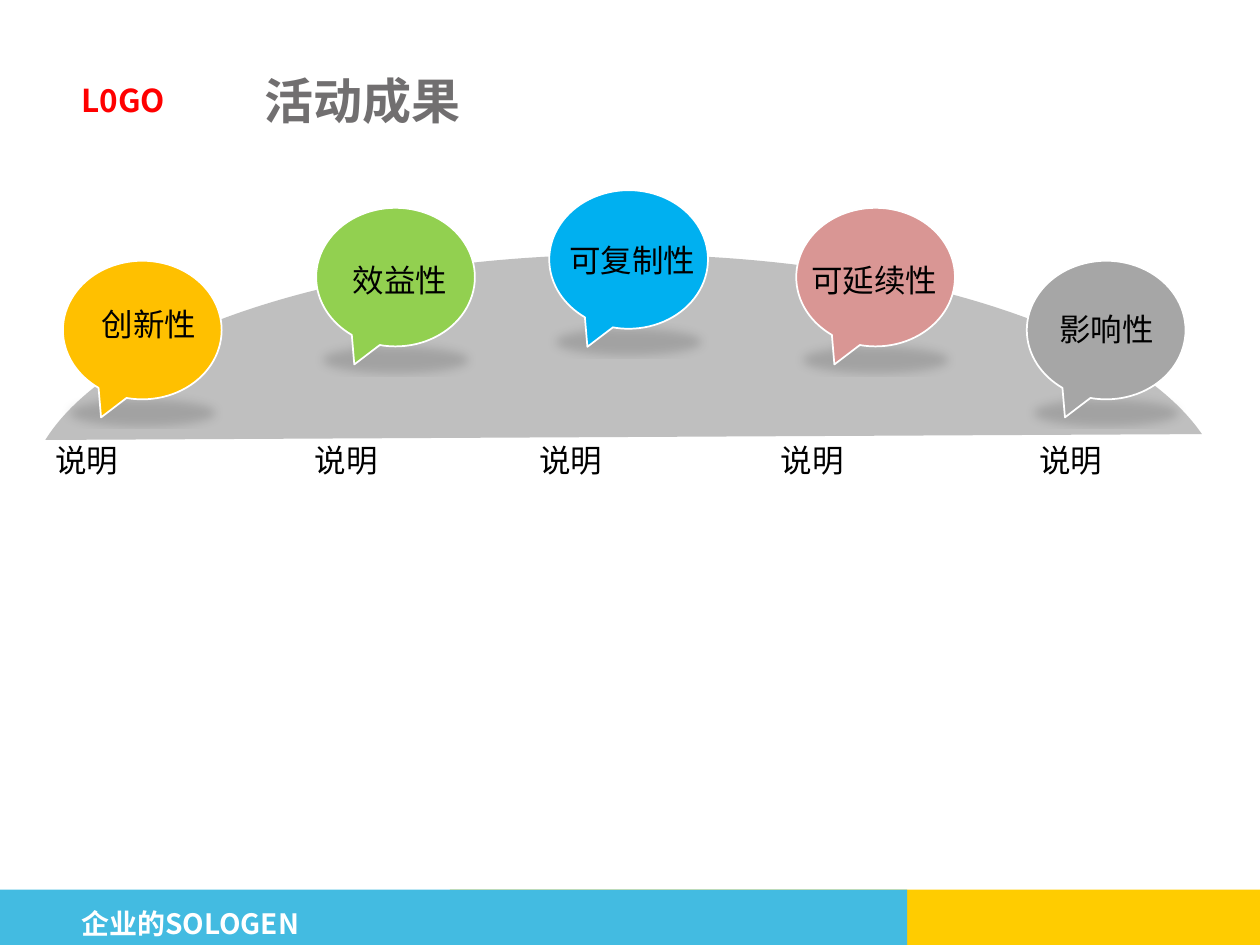
from copy import deepcopy
from typing import NamedTuple

from lxml import etree
from pptx import Presentation
from pptx.dml.color import RGBColor
from pptx.enum.shapes import MSO_SHAPE
from pptx.enum.text import MSO_ANCHOR, MSO_AUTO_SIZE
from pptx.oxml.ns import qn
from pptx.util import Inches, Pt

RECTANGLE = MSO_SHAPE.RECTANGLE
CHORD = MSO_SHAPE.CHORD
CALLOUT = MSO_SHAPE.OVAL_CALLOUT
MIDDLE = MSO_ANCHOR.MIDDLE
GROW = MSO_AUTO_SIZE.SHAPE_TO_FIT_TEXT

WHITE = RGBColor(0xFF, 0xFF, 0xFF)
BLACK = RGBColor(0, 0, 0)
RED = RGBColor(0xFF, 0, 0)
YELLOW = RGBColor(0xFF, 0xCC, 0)
FOOTER_BLUE = RGBColor(0x43, 0xBB, 0xE1)
TITLE_GREY = RGBColor(0x71, 0x6F, 0x70)
ARCH_GREY = RGBColor(0xBF, 0xBF, 0xBF)
AMBER = RGBColor(0xFF, 0xC0, 0)
GREEN = RGBColor(0x92, 0xD0, 0x50)
SKY = RGBColor(0, 0xB0, 0xF0)
ROSE = RGBColor(0xD9, 0x96, 0x94)
GREY = RGBColor(0xA6, 0xA6, 0xA6)

HEADING_FONT = "Noto Sans CJK SC"
BODY_FONT = "Arial"


class Box(NamedTuple):
    left: float
    top: float
    width: float
    height: float

    def lengths(self) -> list:
        return [Inches(value) for value in self]


class Result(NamedTuple):
    name: str
    color: RGBColor
    left: float
    top: float
    label: Box
    note_left: float


RESULTS = [
    Result("创新性", AMBER, 0.5, 2.07, Box(0.71, 2.37, 1.14, 0.41), 0.34),
    Result("效益性", GREEN, 2.51, 1.65, Box(2.7, 2.02, 0.96, 0.41), 2.4),
    Result("可复制性", SKY, 4.36, 1.51, Box(4.42, 1.86, 1.21, 0.41), 4.18),
    Result("可延续性", ROSE, 6.32, 1.65, Box(6.34, 2.02, 1.21, 0.41), 6.1),
    Result("影响性", GREY, 8.15, 2.07, Box(8.31, 2.41, 0.96, 0.41), 8.15),
]


def add_text(slide, text: str, box: Box, size: int = 18,
             color: RGBColor = BLACK, heading: bool = False,
             wrap: bool = True, grow: bool = True):
    textbox = slide.shapes.add_textbox(*box.lengths())
    frame = textbox.text_frame
    frame.text = text
    frame.word_wrap = wrap
    if grow:
        frame.auto_size = GROW
    run = frame.paragraphs[0].runs[0]
    run.font.name = HEADING_FONT if heading else BODY_FONT
    run.font.size = Pt(size)
    run.font.bold = heading
    run.font.color.rgb = color
    if heading:
        east_asian = etree.SubElement(run.font._element, qn("a:ea"))
        east_asian.set("typeface", HEADING_FONT)
    return frame


def add_band(slide, box: Box, color: RGBColor) -> None:
    band = slide.shapes.add_shape(RECTANGLE, *box.lengths())
    band.shadow.inherit = False
    band.fill.solid()
    band.fill.fore_color.rgb = color
    band.line.fill.background()


def add_arch(slide) -> None:
    arch = slide.shapes.add_shape(CHORD, *Box(0.21, 2.02, 9.51, 3.92).lengths())
    arch.adjustments[0] = 111.63
    arch.adjustments[1] = 212
    arch.shadow.inherit = False
    arch.line.fill.background()
    arch.fill.gradient()
    arch.fill.gradient_angle = 270
    stop_list = arch._element.spPr.find(".//" + qn("a:gsLst"))
    stop_list.append(deepcopy(stop_list[-1]))
    shades = [(0, ARCH_GREY), (0.53, ARCH_GREY), (1, WHITE)]
    for stop, (position, color) in zip(arch.fill.gradient_stops, shades):
        stop.position = position
        stop.color.rgb = color


def add_floor_shadow(shape) -> None:
    shape.shadow.inherit = False
    effects = shape._element.spPr.find(qn("a:effectLst"))
    shadow = etree.SubElement(
        effects, qn("a:outerShdw"), blurRad=str(Pt(6)), dist="0", dir="5400000",
        sx="90000", sy="-19000", algn="b", rotWithShape="0")
    color = etree.SubElement(shadow, qn("a:srgbClr"), val=str(BLACK))
    etree.SubElement(color, qn("a:alpha"), val="15000")


def add_bubble(slide, result: Result) -> None:
    box = Box(result.left, result.top, 1.26, 1.1)
    bubble = slide.shapes.add_shape(CALLOUT, *box.lengths())
    bubble.adjustments[0] = -0.26
    bubble.adjustments[1] = 0.63
    bubble.fill.solid()
    bubble.fill.fore_color.rgb = result.color
    bubble.line.color.rgb = WHITE
    bubble.line.width = Pt(1)
    add_floor_shadow(bubble)


def main() -> None:
    deck = Presentation()
    deck.slide_width = Inches(10)
    deck.slide_height = Inches(7.5)
    slide = deck.slides.add_slide(deck.slide_layouts[6])

    add_band(slide, Box(3.57, 7.06, 6.44, 0.45), YELLOW)
    add_band(slide, Box(0, 7.06, 7.2, 0.45), FOOTER_BLUE)
    footer = add_text(slide, "企业的SOLOGEN", Box(0.55, 7.01, 5, 0.5), 16,
                      WHITE, heading=True)
    footer.paragraphs[0].line_spacing = 1.5
    add_text(slide, "L0GO", Box(0.55, 0.59, 0.9, 0.4), 18, RED,
             heading=True, wrap=False)

    add_arch(slide)
    title = add_text(slide, "活动成果", Box(2, 0.37, 7.41, 0.85), 28,
                     TITLE_GREY, heading=True, grow=False)
    title.vertical_anchor = MIDDLE

    for result in RESULTS:
        add_bubble(slide, result)
        add_text(slide, result.name, result.label, wrap=False)
        add_text(slide, "说明", Box(result.note_left, 3.45, 1.57, 0.4))

    deck.save("out.pptx")


if __name__ == "__main__":
    main()
